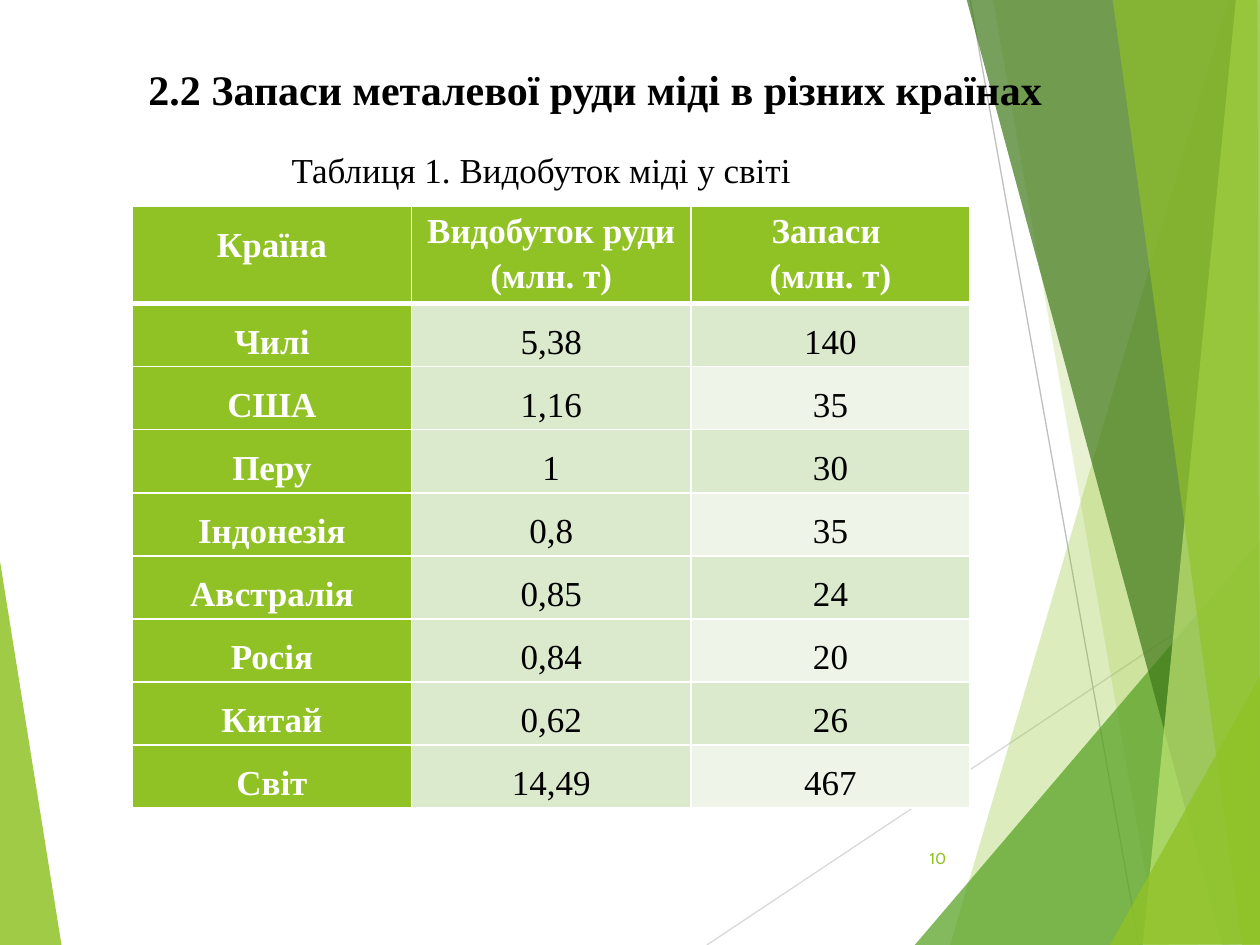
import dataclasses

import pptx
import pptx.dml.color
import pptx.enum.shapes
import pptx.enum.text
import pptx.oxml.ns
import pptx.util
from lxml import etree

Inches = pptx.util.Inches
Pt = pptx.util.Pt
qn = pptx.oxml.ns.qn
Align = pptx.enum.text.PP_ALIGN
Anchor = pptx.enum.text.MSO_ANCHOR
Fit = pptx.enum.text.MSO_AUTO_SIZE

SERIF = "Times New Roman"
GREEN, BLACK, WHITE = "90C226", "000000", "FFFFFF"
BANDS = ("DBE9CD", "EEF4E8")


@dataclasses.dataclass
class Facet:
    points: list
    color: str
    alpha: int


@dataclasses.dataclass
class Ray:
    start: tuple
    end: tuple
    color: str


RAYS = [
    Ray((5.61, 7.5), (10.01, 4.57), "D9D9D9"),
    Ray((7.7, 0), (9.04, 7.5), "BFBFBF"),
]
LEFT = Facet([(-0.01, 4.39), (0.49, 7.51), (-0.01, 7.5)], GREEN, 85)
RIGHT = [
    Facet([(9.75, 0), (7.54, 7.5), (10.02, 7.51), (10.01, 0.01)], GREEN, 30),
    Facet([(7.88, -0.01), (9.19, 7.5), (10.01, 7.5), (10.01, -0.01)], GREEN, 20),
    Facet([(7.26, 7.5), (10, 4.29), (10.01, 7.5)], "54A021", 72),
    Facet([(7.67, -0.01), (9.7, 7.5), (10.01, 7.49), (10.01, -0.01)], "3F7819", 70),
    Facet([(9.81, -0.01), (9.07, 7.5), (10.01, 7.5), (10, -0.01)], "C0E474", 70),
    Facet([(8.83, -0.01), (9.86, 7.5), (10, 7.5), (9.98, -0.01)], GREEN, 65),
    Facet([(8.81, 7.5), (10.01, 5.35), (10.01, 7.49)], GREEN, 80),
]
ROWS = [
    ("Країна", "Видобуток руди\n(млн. т)", "Запаси \n(млн. т)"),
    ("Чилі", "5,38", "140"),
    ("США", "1,16", "35"),
    ("Перу", "1", "30"),
    ("Індонезія", "0,8", "35"),
    ("Австралія", "0,85", "24"),
    ("Росія", "0,84", "20"),
    ("Китай", "0,62", "26"),
    ("Світ", "14,49", "467"),
]


def hue(code: str) -> pptx.dml.color.RGBColor:
    return pptx.dml.color.RGBColor.from_string(code)


def apply(target, values: dict) -> None:
    for name, value in values.items():
        setattr(target, name, value)


def write(frame, text: str, color: str, font: dict, para: dict) -> None:
    frame.text = text
    for line in frame.paragraphs:
        apply(line, para)
        for run in line.runs:
            apply(run.font, font)
            run.font.color.rgb = hue(color)


def place(shape, left: float, top: float, width: float, height: float) -> None:
    apply(shape, {"left": Inches(left), "top": Inches(top),
                  "width": Inches(width), "height": Inches(height)})


def draw_facet(shapes, facet: Facet) -> None:
    first, *rest = [(Inches(x), Inches(y)) for x, y in facet.points]
    pen = shapes.build_freeform(*first)
    pen.add_line_segments(rest, close=True)
    shape = pen.convert_to_shape()
    shape.shadow.inherit = False
    shape.fill.solid()
    shape.fill.fore_color.rgb = hue(facet.color)
    shape.line.fill.background()
    tint = shape.element.find(".//" + qn("a:srgbClr"))
    etree.SubElement(tint, qn("a:alpha"), val=str(facet.alpha * 1000))


def draw_ray(shapes, ray: Ray) -> None:
    ends = [Inches(v) for v in ray.start + ray.end]
    line = shapes.add_connector(pptx.enum.shapes.MSO_CONNECTOR.STRAIGHT, *ends)
    line.line.color.rgb = hue(ray.color)
    line.line.width = Pt(0.75)
    etree.SubElement(line.element.spPr, qn("a:effectLst"))


def edge(cell, widths: dict) -> None:
    props = cell._tc.get_or_add_tcPr()
    for side in "LRTB":
        line = etree.SubElement(props, qn("a:ln" + side),
                                w=str(Pt(widths.get(side, 1))))
        fill = etree.SubElement(line, qn("a:solidFill"))
        etree.SubElement(fill, qn("a:srgbClr"), val=WHITE)


def draw_table(shapes) -> None:
    grid = shapes.add_table(len(ROWS), 3, Inches(1.05), Inches(1.64),
                            Inches(6.65), Inches(4.77)).table
    for r, row in enumerate(ROWS):
        grid.rows[r].height = Inches(0.5 if r else 0.77)
        for c, text in enumerate(row):
            cell = grid.cell(r, c)
            head = r == 0 or c == 0
            apply(cell, {"margin_left": Inches(0.07), "margin_right": Inches(0.07),
                         "margin_top": 0, "margin_bottom": 0})
            edge(cell, {0: {"B": 3}, 1: {"T": 3}}.get(r, {}))
            # Only the last column alternates its band
            band = BANDS[(r - 1) % 2 if c == 2 else 0]
            cell.fill.solid()
            cell.fill.fore_color.rgb = hue(GREEN if head else band)
            write(cell.text_frame, text, WHITE if head else BLACK,
                  {"name": SERIF, "size": Pt(20), "bold": head},
                  {"alignment": Align.CENTER,
                   "line_spacing": 1.15 if r == 0 and c else 1.5})


def main() -> None:
    deck = pptx.Presentation()
    apply(deck, {"slide_width": Inches(10), "slide_height": Inches(7.5)})
    slide = deck.slides.add_slide(deck.slide_layouts[5])
    shapes = slide.shapes

    # Backdrop
    draw_facet(shapes, LEFT)
    for ray in RAYS:
        draw_ray(shapes, ray)
    for facet in RIGHT:
        draw_facet(shapes, facet)

    # Title, brought in front of the backdrop
    title = shapes.title
    title.element.getparent().append(title.element)
    place(title, 0.78, 0.25, 7.89, 0.63)
    apply(title.text_frame, {"word_wrap": True, "vertical_anchor": Anchor.TOP,
                             "auto_size": Fit.SHAPE_TO_FIT_TEXT})
    write(title.text_frame, "2.2 Запаси металевої руди міді в різних країнах", BLACK,
          {"name": SERIF, "size": Pt(24), "bold": True},
          {"alignment": Align.CENTER, "line_spacing": 1.5,
           "space_before": Pt(8), "space_after": Pt(6)})

    draw_table(shapes)

    # Table caption
    note = shapes.add_textbox(Inches(0.67), Inches(1.13), Inches(7.32), Inches(0.44))
    apply(note.text_frame, {"word_wrap": True, "auto_size": Fit.SHAPE_TO_FIT_TEXT})
    write(note.text_frame, "Таблиця 1. Видобуток міді у світі ", BLACK,
          {"name": SERIF, "size": Pt(20)}, {"alignment": Align.CENTER})

    # Page number
    page = shapes.add_textbox(Inches(7.05), Inches(6.61), Inches(0.56), Inches(0.4))
    apply(page.text_frame, {"word_wrap": True, "vertical_anchor": Anchor.MIDDLE})
    write(page.text_frame, "10", GREEN, {"name": "Cabin", "size": Pt(9)},
          {"alignment": Align.RIGHT})

    deck.save("out.pptx")


if __name__ == "__main__":
    main()
